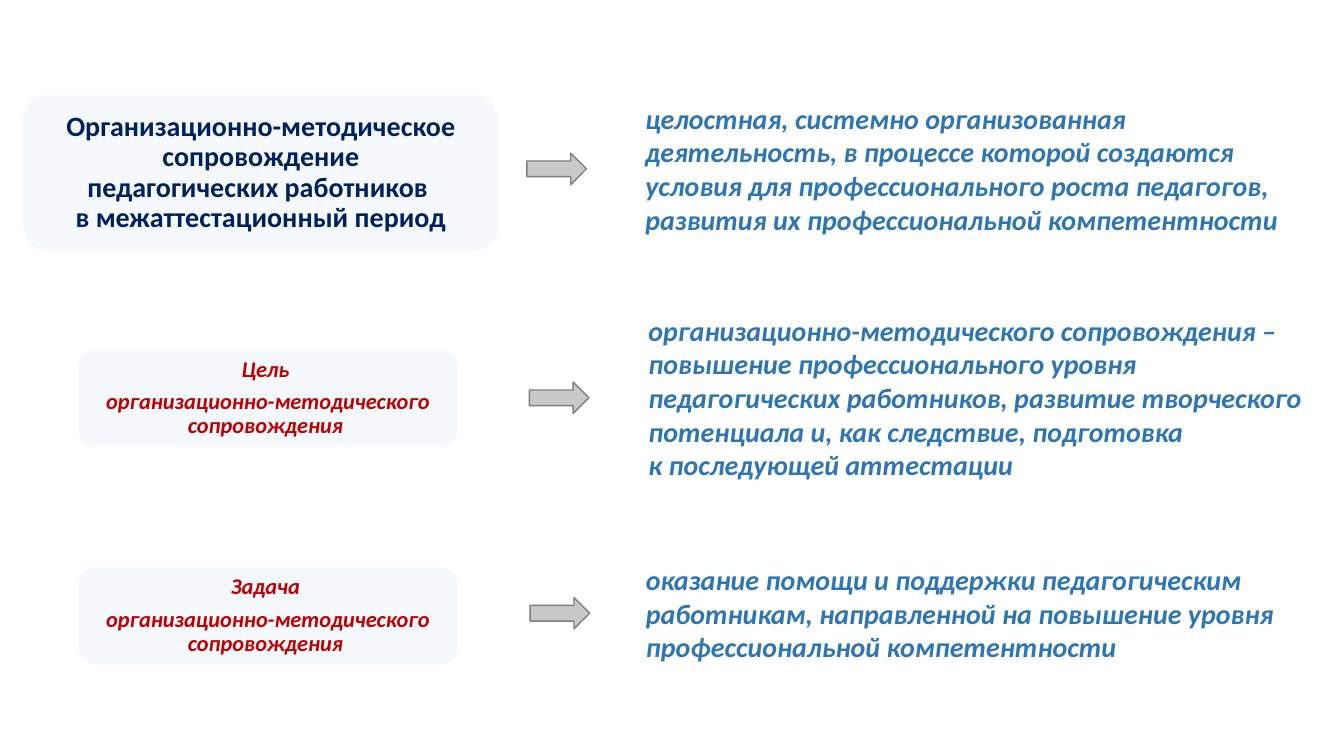
from pptx import Presentation
from pptx.dml.color import RGBColor
from pptx.enum.shapes import MSO_SHAPE as Shape
from pptx.enum.text import MSO_ANCHOR as Anchor, PP_ALIGN as Align
from pptx.util import Cm, Pt

NAVY = RGBColor(0x00, 0x20, 0x60)
RED = RGBColor(0xC0, 0x00, 0x00)
BLUE = RGBColor(0x2E, 0x75, 0xB6)
PALE_BLUE = RGBColor(0xF5, 0xF9, 0xFD)
SILVER = RGBColor(0xC9, 0xC9, 0xC9)
GRAY = RGBColor(0x80, 0x80, 0x80)


class SlideBuilder:
    """Holds the text styles and the slide being filled."""

    font_name = "Calibri"
    title_style = {"size": Pt(20), "bold": True, "color": NAVY}
    label_style = {"size": Pt(16), "bold": True, "italic": True, "color": RED}
    answer_style = {"size": Pt(20), "bold": True, "italic": True, "color": BLUE}
    card_format = {"alignment": Align.CENTER, "line_spacing": 0.9}
    label_format = {**card_format, "space_after": Pt(5.6)}
    answer_format = {"alignment": Align.LEFT}

    def __init__(self, slide):
        self.slide = slide

    def add_shape(self, kind, box, fill=None, line=None):
        shape = self.slide.shapes.add_shape(kind, *map(Cm, box))
        shape.shadow.inherit = False
        if fill is None:
            shape.fill.background()
        else:
            shape.fill.solid()
            shape.fill.fore_color.rgb = fill
        if line is None:
            shape.line.fill.background()
        else:
            shape.line.color.rgb = line
            shape.line.width = Pt(1)
        return shape

    def add_text(self, shape, lines, style, paragraph_format):
        frame = shape.text_frame
        frame.word_wrap = True
        frame.vertical_anchor = Anchor.MIDDLE
        for index, line in enumerate(lines):
            paragraph = frame.paragraphs[0] if index == 0 else frame.add_paragraph()
            for name, value in paragraph_format.items():
                setattr(paragraph, name, value)
            run = paragraph.add_run()
            run.text = line
            run.font.name = self.font_name
            for name, value in style.items():
                if name == "color":
                    run.font.color.rgb = value
                else:
                    setattr(run.font, name, value)

    def title_card(self, box, lines):
        card = self.add_shape(Shape.ROUNDED_RECTANGLE, box, PALE_BLUE)
        self.add_text(card, lines, self.title_style, self.card_format)

    def label_card(self, top, heading):
        card = self.add_shape(Shape.ROUNDED_RECTANGLE, (1.98, top, 9.55, 2.44), PALE_BLUE)
        lines = [heading, "организационно-методического сопровождения "]
        self.add_text(card, lines, self.label_style, self.label_format)

    def arrow(self, left, top):
        self.add_shape(Shape.RIGHT_ARROW, (left, top, 1.5, 0.79), SILVER, GRAY)

    def answer(self, top, width, height, lines):
        box = self.add_shape(Shape.ROUNDED_RECTANGLE, (15.85, top, width, height))
        self.add_text(box, lines, self.answer_style, self.answer_format)


def main():
    presentation = Presentation()
    presentation.slide_width = Cm(33.87)
    presentation.slide_height = Cm(19.05)
    builder = SlideBuilder(presentation.slides.add_slide(presentation.slide_layouts[6]))

    # Definition
    builder.title_card((0.58, 2.39, 11.99, 3.94), [
        "Организационно-методическое сопровождение",
        "педагогических работников ",
        "в межаттестационный период",
    ])
    builder.arrow(13.28, 3.86)
    builder.answer(2.57, 17.73, 3.35, [
        "целостная, системно организованная деятельность, в процессе которой "
        "создаются условия для профессионального роста педагогов, развития их "
        "профессиональной компетентности",
    ])

    # Goal
    builder.label_card(8.81, "Цель ")
    builder.arrow(13.34, 9.63)
    builder.answer(7.54, 18.31, 4.95, [
        "организационно-методического сопровождения – повышение "
        "профессионального уровня",
        "педагогических работников, развитие творческого потенциала и, "
        "как следствие, подготовка",
        "к последующей аттестации",
    ])

    # Task
    builder.label_card(14.3, "Задача ")
    builder.arrow(13.36, 15.06)
    builder.answer(13.64, 17.73, 3.61, [
        "оказание помощи и поддержки педагогическим работникам, направленной "
        "на повышение уровня профессиональной компетентности",
    ])

    presentation.save("out.pptx")


if __name__ == "__main__":
    main()
